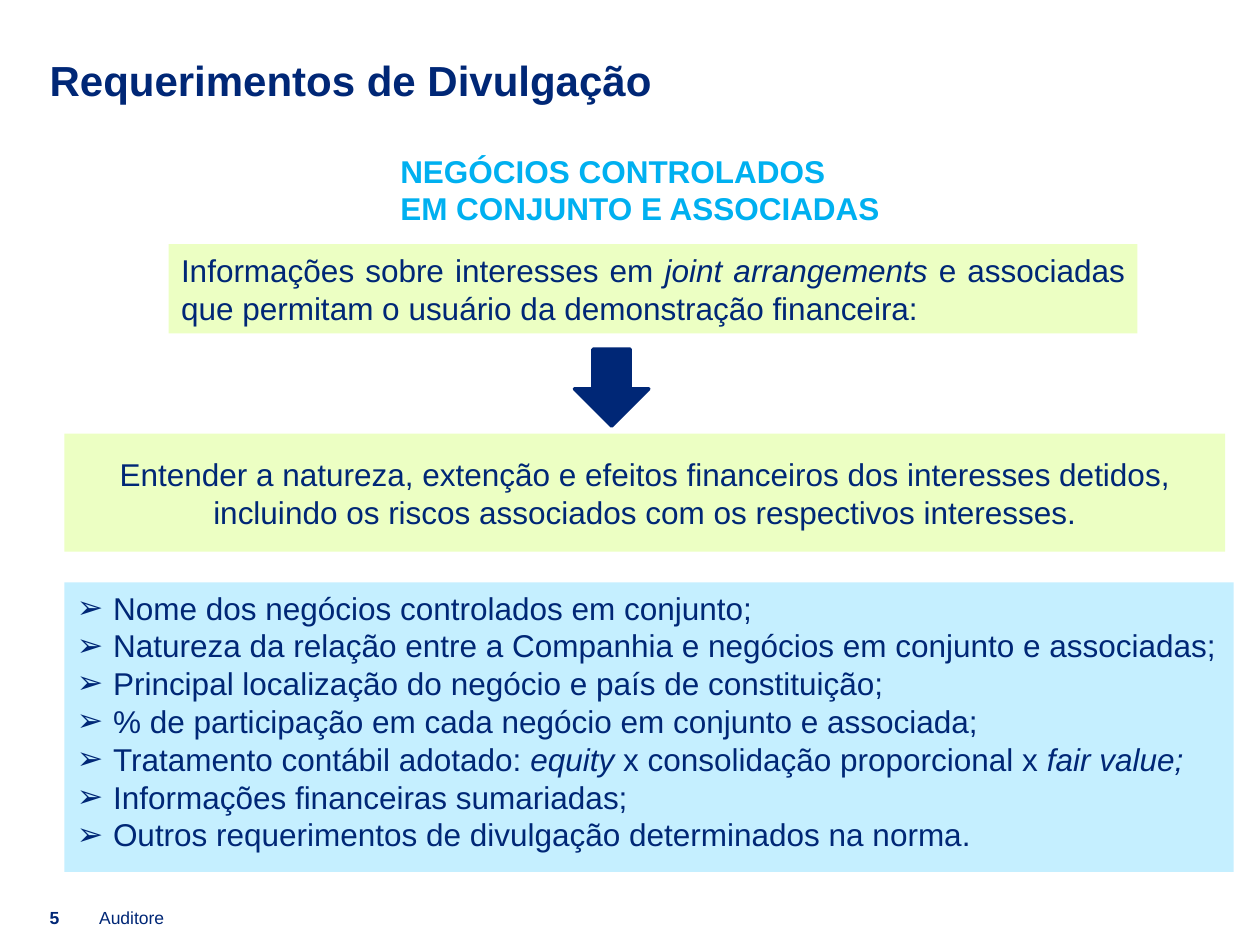
from lxml import etree
from pptx import Presentation, util as u
from pptx.dml.color import RGBColor
from pptx.enum import shapes, text
from pptx.oxml.ns import qn

THEME = dict(navy="002776", cyan="00B0F0", lime="ECFFC3", sky="C5EFFF",
             font="Arial", title=24, body=18, footer=10)
AL, ANCHOR, SHAPE = text.PP_ALIGN, text.MSO_ANCHOR, shapes.MSO_SHAPE

# A paragraph is a list of pieces; every second piece is italic.
TITLE = [["Requerimentos de Divulgação"]]
HEADING = [["NEGÓCIOS CONTROLADOS"], ["EM CONJUNTO E ASSOCIADAS"]]
SCOPE = [["Informações sobre interesses em ", "joint arrangements ",
          "e associadas que permitam o usuário da demonstração financeira:"]]
PURPOSE = [["Entender a natureza, extenção e efeitos financeiros dos interesses "
            "detidos, incluindo os riscos associados com os respectivos interesses."]]
DISCLOSURES = [
    ["Nome dos negócios controlados em conjunto;"],
    ["Natureza da relação entre a Companhia e negócios em conjunto e associadas;"],
    ["Principal localização do negócio e país de constituição;"],
    ["% de participação em cada negócio em conjunto e associada;"],
    ["Tratamento contábil adotado: ", "equity",
     " x consolidação proporcional x ", "fair value;"],
    ["Informações financeiras sumariadas;"],
    ["Outros requerimentos de divulgação determinados na norma."],
]
PAGE, FIRM = [["5"]], [["Auditore"]]


def rgb(name):
    return RGBColor.from_string(THEME[name])


def add_bullet(p, char="➢", indent=u.Cm(0.73)):
    pPr = p._p.get_or_add_pPr()
    pPr.set("marL", str(indent))
    pPr.set("indent", str(-indent))
    etree.SubElement(pPr, qn("a:buFont")).set("typeface", THEME["font"])
    etree.SubElement(pPr, qn("a:buChar")).set("char", char)


def add_shape(s, kind, box, fill):
    sp = s.shapes.add_shape(kind, *map(u.Cm, box))
    sp.shadow.inherit = False
    sp.fill.solid()
    sp.fill.fore_color.rgb = rgb(fill)
    sp.line.fill.background()
    return sp


def add_text(s, paras, box, fill=None, size="body", color="navy", bold=False,
             align=AL.LEFT, anchor=ANCHOR.TOP, inset=True, bullets=False):
    """Write paragraphs in a filled rectangle, or a text box if fill is None."""
    if fill:
        sp = add_shape(s, SHAPE.RECTANGLE, box, fill)
    else:
        sp = s.shapes.add_textbox(*map(u.Cm, box))
    tf = sp.text_frame
    tf.word_wrap = True
    tf.vertical_anchor = anchor
    if not inset:
        tf.margin_left = tf.margin_right = tf.margin_top = tf.margin_bottom = 0
    for i, pieces in enumerate(paras):
        p = tf.add_paragraph() if i else tf.paragraphs[0]
        p.alignment = align
        if bullets:
            add_bullet(p)
        for j, piece in enumerate(pieces):
            r = p.add_run()
            r.text = piece
            r.font.name = THEME["font"]
            r.font.size = u.Pt(THEME[size])
            r.font.color.rgb = rgb(color)
            r.font.bold = bold
            r.font.italic = j % 2 == 1


def main():
    prs = Presentation()
    prs.slide_width, prs.slide_height = u.Cm(25.4), u.Cm(19.05)
    s = prs.slides.add_slide(prs.slide_layouts[6])

    add_text(s, TITLE, (1, 1.09, 23.4, 1.02), size="title", bold=True, inset=False)
    footer = dict(size="footer", anchor=ANCHOR.BOTTOM, inset=False)
    add_text(s, FIRM, (2, 18.34, 10.2, 0.36), **footer)
    add_text(s, PAGE, (1, 18.34, 1, 0.36), bold=True, **footer)

    add_text(s, DISCLOSURES, (1.3, 11.74, 23.57, 5.84), fill="sky", bullets=True)
    add_text(s, PURPOSE, (1.3, 8.74, 23.4, 2.38), fill="lime",
             align=AL.CENTER, anchor=ANCHOR.MIDDLE)
    intro = dict(align=AL.JUSTIFY, anchor=ANCHOR.MIDDLE)
    add_text(s, HEADING, (7.82, 2.92, 10.41, 1.8), color="cyan", bold=True, **intro)
    add_text(s, SCOPE, (3.4, 4.92, 19.53, 1.8), fill="lime", **intro)

    arrow = add_shape(s, SHAPE.DOWN_ARROW, (11.58, 7.04, 1.5, 1.55), "navy")
    arrow.line.color.rgb = rgb("navy")
    arrow.line.width = u.Pt(2)

    prs.save("out.pptx")


if __name__ == "__main__":
    main()
